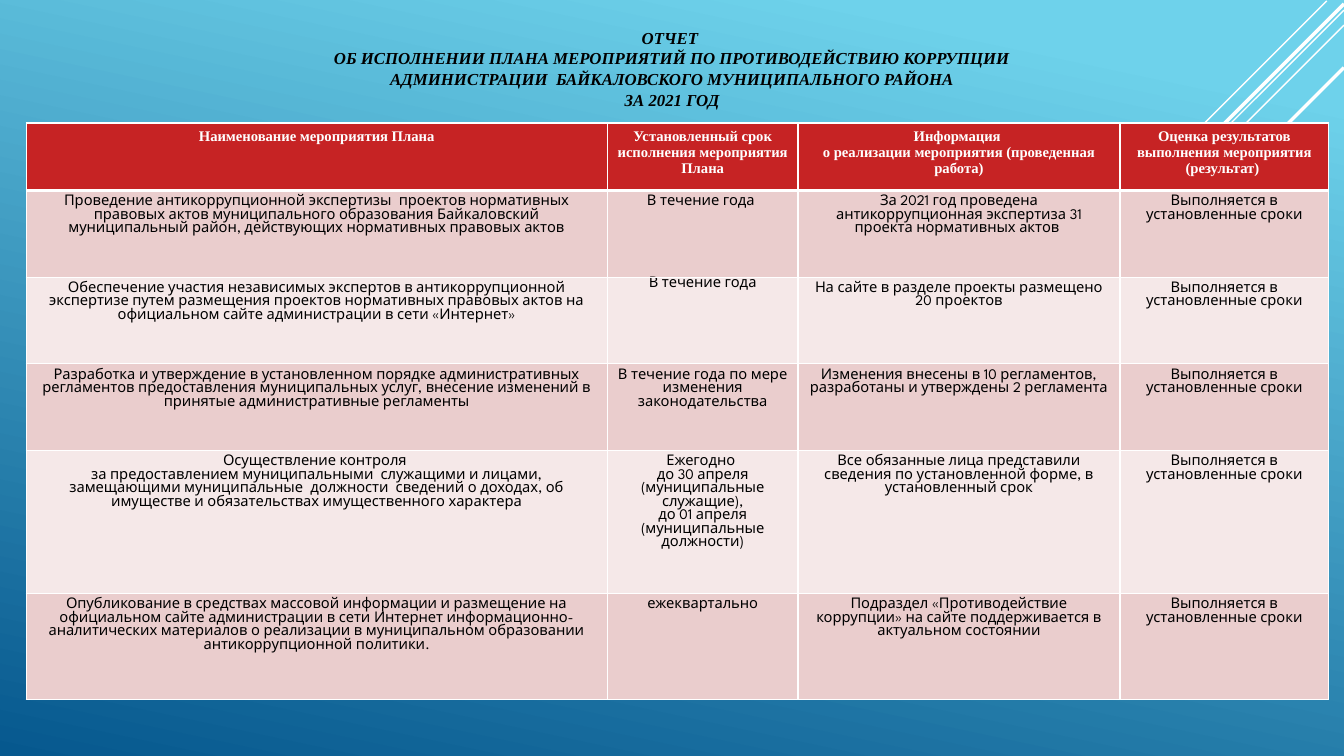
from lxml import etree
from pptx import Presentation
from pptx.dml.color import RGBColor
from pptx.enum.shapes import MSO_CONNECTOR
from pptx.enum.text import MSO_ANCHOR, MSO_AUTO_SIZE, PP_ALIGN
from pptx.oxml.ns import qn
from pptx.util import Inches, Pt

STRAIGHT = MSO_CONNECTOR.STRAIGHT
TOP, BOTTOM = MSO_ANCHOR.TOP, MSO_ANCHOR.BOTTOM
NO_AUTOFIT = MSO_AUTO_SIZE.NONE
CENTER = PP_ALIGN.CENTER

SLIDE_WIDTH, SLIDE_HEIGHT = Inches(13.33), Inches(7.5)
COLORS = {
    "sky": "6ED2EB",
    "deep": "06588E",
    "white": "FFFFFF",
    "black": "000000",
    "header": "C62324",
    "odd": "EACDCD",
    "even": "F5E8E8",
}
TITLE_FONT = {"size": Pt(12), "name": "Times New Roman", "bold": True, "italic": True}
HEADER_FONT = {"size": Pt(10.5), "name": "Times New Roman", "bold": True}
BODY_FONT = {"size": Pt(10.5), "name": "League Spartan", "bold": False}
TIGHT_MARGINS = {
    "margin_left": Inches(0.07),
    "margin_right": Inches(0.07),
    "margin_top": 0,
    "margin_bottom": 0,
}

TITLE = (
    "ОТЧЕТ \vОБ ИСПОЛНЕНИИ ПЛАНА МЕРОПРИЯТИЙ ПО ПРОТИВОДЕЙСТВИЮ КОРРУПЦИИ"
    "\vАДМИНИСТРАЦИИ  БАЙКАЛОВСКОГО МУНИЦИПАЛЬНОГО РАЙОНА\vЗА 2021 ГОД"
)
HEADINGS = (
    "Наименование мероприятия Плана",
    "Установленный срок исполнения мероприятия Плана",
    "Информация \vо реализации мероприятия (проведенная работа)",
    "Оценка результатов выполнения мероприятия (результат) ",
)
RESULT = "Выполняется в установленные сроки"
MEASURES = [
    (
        "Проведение антикоррупционной экспертизы  проектов нормативных правовых актов "
        "муниципального образования Байкаловский муниципальный район, действующих "
        "нормативных правовых актов",
        "В течение года ",
        "За 2021 год проведена антикоррупционная экспертиза 31 проекта нормативных актов ",
    ),
    (
        "Обеспечение участия независимых экспертов в антикоррупционной экспертизе путем "
        "размещения проектов нормативных правовых актов на официальном сайте "
        "администрации в сети «Интернет»",
        "В течение года",
        "На сайте в разделе проекты размещено 20 проектов",
    ),
    (
        "Разработка и утверждение в установленном порядке административных регламентов "
        "предоставления муниципальных услуг, внесение изменений в принятые "
        "административные регламенты",
        "В течение года по мере изменения законодательства",
        "Изменения внесены в 10 регламентов, разработаны и утверждены 2 регламента",
    ),
    (
        "Осуществление контроля \nза предоставлением муниципальными  служащими и лицами, "
        "замещающими муниципальные  должности  сведений о доходах, об имуществе и "
        "обязательствах имущественного характера",
        "Ежегодно \nдо 30 апреля (муниципальные служащие),\nдо 01 апреля\n"
        "(муниципальные должности)",
        "Все обязанные лица представили сведения по установленной форме, в установленный срок",
    ),
    (
        "Опубликование в средствах массовой информации и размещение на официальном сайте "
        "администрации в сети Интернет информационно-аналитических материалов о "
        "реализации в муниципальном образовании антикоррупционной политики.",
        "ежеквартально",
        "Подраздел «Противодействие коррупции» на сайте поддерживается в актуальном состоянии",
    ),
]
COLUMN_SHARES = (5.76, 1.89, 3.19, 2.07)
ROW_SHARES = (0.67, 0.86, 0.86, 0.86, 1.42, 1.05)
RAYS = (
    (98.72, 0.13, 31.2, 1),
    (100, 1.33, 49.89, 1),
    (100, 3.33, 40.66, 1),
    (100, 0.53, 39.83, 2.5),
    (100, 8.93, 35.63, 2.5),
)


def rgb(color):
    return RGBColor.from_string(COLORS[color])


def across(percent):
    return round(SLIDE_WIDTH * percent / 100)


def down(percent):
    return round(SLIDE_HEIGHT * percent / 100)


def region(left, top, width, height):
    return across(left), down(top), across(width), down(height)


def apply(target, values):
    for attribute, value in values.items():
        setattr(target, attribute, value)


def write(frame, text, font, color, line_spacing=1.0):
    frame.text = text
    for paragraph in frame.paragraphs:
        apply(paragraph, {"alignment": CENTER, "line_spacing": line_spacing})
        for run in paragraph.runs:
            apply(run.font, font)
            run.font.color.rgb = rgb(color)


def paint_background(slide):
    fill = slide.background.fill
    fill.gradient()
    fill.gradient_angle = 258
    for stop, color, position in zip(fill.gradient_stops, ("sky", "deep"), (0.1, 1.0)):
        stop.color.rgb = rgb(color)
        stop.position = position


def draw_rays(slide):
    for left, top, run, weight in RAYS:
        x, y, reach = across(left), down(top), across(run)
        ray = slide.shapes.add_connector(STRAIGHT, x, y, x - reach, y + reach)
        ray.line.color.rgb = rgb("white")
        ray.line.width = Pt(weight)
        etree.SubElement(ray._element.spPr, qn("a:effectLst"))


def place_title(slide, box):
    title = slide.shapes.title
    apply(title, dict(zip(("left", "top", "width", "height"), box)))
    frame = title.text_frame
    apply(frame, {"vertical_anchor": BOTTOM, "word_wrap": True, "auto_size": NO_AUTOFIT})
    write(frame, TITLE, TITLE_FONT, "black", 1.03)


def draw_borders(cell, weights):
    properties = cell._tc.get_or_add_tcPr()
    for index, (side, weight) in enumerate(weights.items()):
        border = etree.Element(qn(f"a:ln{side}"), w=str(Pt(weight)))
        paint = etree.SubElement(border, qn("a:solidFill"))
        etree.SubElement(paint, qn("a:srgbClr"), val=COLORS["white"])
        properties.insert(index, border)


def fill_cell(cell, text, row):
    heading = row == 0
    cell.vertical_anchor = TOP
    write(
        cell.text_frame,
        text,
        HEADER_FONT if heading else BODY_FONT,
        "white" if heading else "black",
    )
    cell.fill.solid()
    cell.fill.fore_color.rgb = rgb("header" if heading else ("even", "odd")[row % 2])
    draw_borders(cell, {"L": 1, "R": 1, "T": 3 if row == 1 else 1, "B": 3 if heading else 1})


def place_table(slide, box):
    rows = [HEADINGS] + [measure + (RESULT,) for measure in MEASURES]
    table = slide.shapes.add_table(len(rows), len(HEADINGS), *box).table
    for column, share in zip(table.columns, COLUMN_SHARES):
        column.width = round(box[2] * share / sum(COLUMN_SHARES))
    for line, share in zip(table.rows, ROW_SHARES):
        line.height = round(box[3] * share / sum(ROW_SHARES))
    for row, texts in enumerate(rows):
        for column, text in enumerate(texts):
            fill_cell(table.cell(row, column), text, row)
    apply(table.cell(2, 1), TIGHT_MARGINS)


def main():
    deck = Presentation()
    apply(deck, {"slide_width": SLIDE_WIDTH, "slide_height": SLIDE_HEIGHT})
    slide = deck.slides.add_slide(deck.slide_layouts.get_by_name("Title Only"))
    paint_background(slide)
    draw_rays(slide)
    place_title(slide, region(22.06, 1.73, 55.89, 13.47))
    place_table(slide, region(1.95, 16.27, 96.92, 76.27))
    deck.save("out.pptx")


if __name__ == "__main__":
    main()
